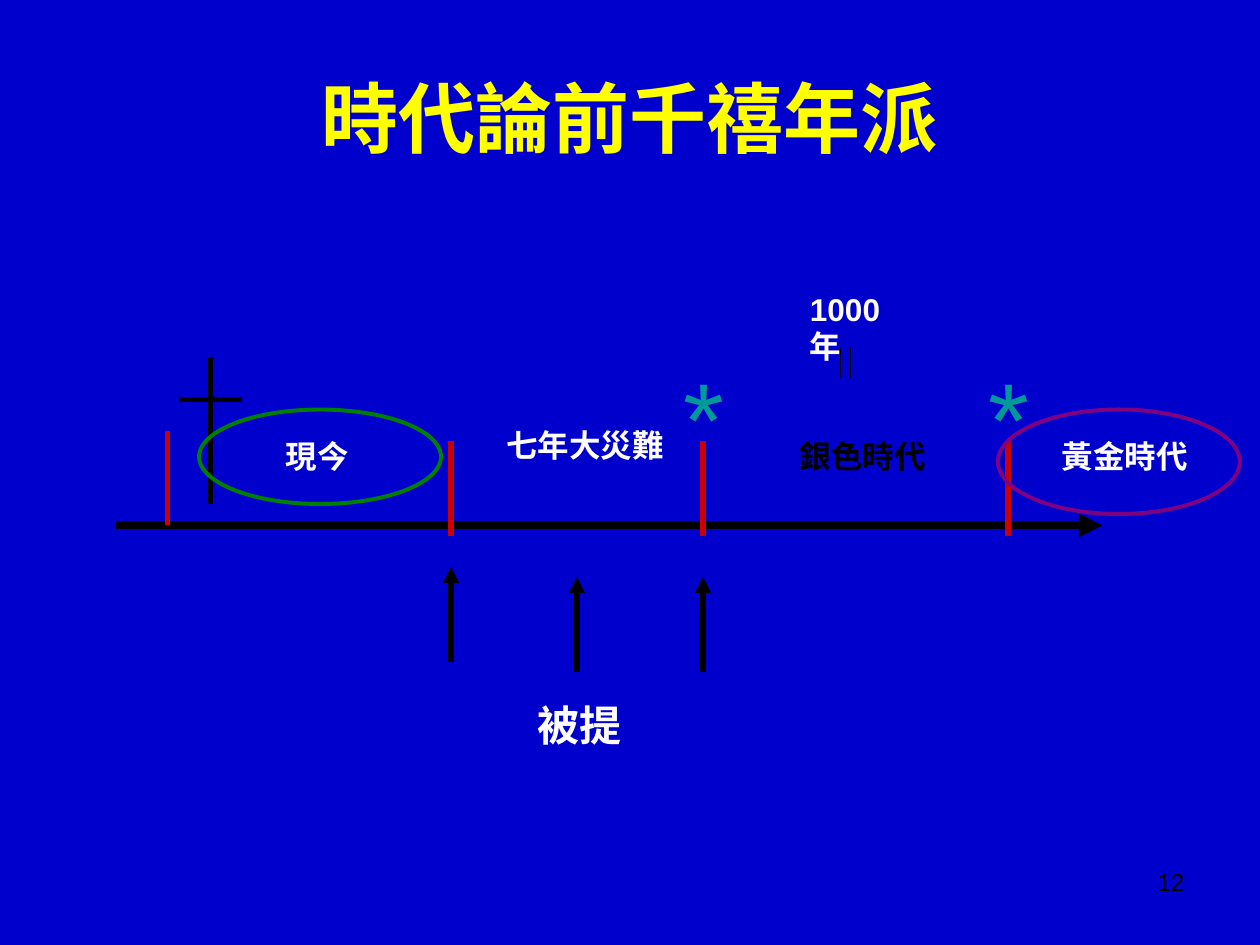
from lxml.etree import SubElement
from pptx import Presentation
from pptx.dml.color import RGBColor
from pptx.enum.shapes import MSO_CONNECTOR, MSO_SHAPE
from pptx.enum.text import MSO_ANCHOR, MSO_AUTO_SIZE, PP_ALIGN
from pptx.oxml.ns import qn
from pptx.util import Inches, Pt

COLORS = {
    "background": "0000CC",
    "title": "FFFF00",
    "white": "FFFFFF",
    "black": "000000",
    "red": "CC0000",
    "teal": "009999",
    "green": "008000",
    "purple": "800080",
}


def color(name):
    return RGBColor.from_string(COLORS[name])


def write_text(frame, text, size=18, fill="white", bold=True, align=PP_ALIGN.LEFT):
    paragraph = frame.paragraphs[0]
    paragraph.alignment = align
    run = paragraph.add_run()
    run.text = text
    run.font.name = "Arial"
    run.font.size = Pt(size)
    run.font.bold = bold
    run.font.color.rgb = color(fill)


def place(shape, left, top, width, height):
    shape.left, shape.top = Inches(left), Inches(top)
    shape.width, shape.height = Inches(width), Inches(height)


def add_title(slide, text):
    title = slide.shapes.title
    place(title, 0.5, 0.3, 9, 1.25)
    title.text_frame.vertical_anchor = MSO_ANCHOR.MIDDLE
    write_text(title.text_frame, text, size=44, fill="title", align=PP_ALIGN.CENTER)


def add_label(slide, text, box, wrap=False, grow=True, **text_format):
    label = slide.shapes.add_textbox(*map(Inches, box))
    frame = label.text_frame
    frame.word_wrap = wrap
    frame.auto_size = MSO_AUTO_SIZE.SHAPE_TO_FIT_TEXT if grow else MSO_AUTO_SIZE.NONE
    write_text(frame, text, **text_format)


def add_line(slide, start, end, fill="black", width=3, arrow=False):
    connector = slide.shapes.add_connector(
        MSO_CONNECTOR.STRAIGHT, *map(Inches, (*start, *end))
    )
    connector.line.color.rgb = color(fill)
    connector.line.width = Pt(width)
    if arrow:
        SubElement(connector.line._get_or_add_ln(), qn("a:tailEnd"), type="triangle")
    SubElement(connector._element.spPr, qn("a:effectLst"))


def add_ellipse(slide, box, outline):
    ellipse = slide.shapes.add_shape(MSO_SHAPE.OVAL, *map(Inches, box))
    ellipse.shadow.inherit = False
    ellipse.fill.background()
    ellipse.line.color.rgb = color(outline)
    ellipse.line.width = Pt(2.25)


def add_timeline(slide):
    add_line(slide, (0.92, 4.17), (8.75, 4.17), width=4.5, arrow=True)
    for x, top in ((1.33, 3.42), (3.58, 3.5), (5.58, 3.5), (8, 3.5)):
        add_line(slide, (x, top), (x, top + 0.75), fill="red")


def add_cross(slide):
    add_line(slide, (1.67, 2.83), (1.67, 4))
    add_line(slide, (1.42, 3.17), (1.92, 3.17))


def add_eras(slide):
    add_label(slide, "現今", (2.17, 3.42, 0.7, 0.4))
    add_label(slide, "銀色時代", (6.25, 3.42, 1.2, 0.4), fill="black")
    add_label(slide, "黃金時代", (8.33, 3.42, 1.2, 0.4))
    add_label(slide, "七年大災難", (3.92, 3.33, 1.45, 0.4))
    for left, width, wrap in ((5.33, 0.53, False), (7.75, 0.33, True)):
        add_label(slide, "*", (left, 2.75, width, 1.1), wrap=wrap,
                  size=60, fill="teal", bold=False)
    add_ellipse(slide, (1.58, 3.25, 1.92, 0.75), "green")
    add_ellipse(slide, (7.92, 3.25, 1.92, 0.83), "purple")


def add_rapture(slide):
    for x, tip in ((3.58, 4.5), (4.58, 4.58), (5.58, 4.58)):
        add_line(slide, (x, tip + 0.75), (x, tip), arrow=True)
    add_label(slide, "被提", (4.17, 5.5, 0.87, 0.5), size=24)


def add_millennium(slide):
    add_label(slide, "1000年", (6.33, 2.25, 0.95, 0.7), wrap=True)
    for x in (6.67, 6.75):
        add_line(slide, (x, 3), (x, 2.75), width=0.75)


def main():
    presentation = Presentation()
    presentation.slide_width = Inches(10)
    presentation.slide_height = Inches(7.5)
    slide = presentation.slides.add_slide(presentation.slide_layouts[5])
    slide.background.fill.solid()
    slide.background.fill.fore_color.rgb = color("background")
    add_title(slide, "時代論前千禧年派")
    add_timeline(slide)
    add_cross(slide)
    add_eras(slide)
    add_rapture(slide)
    add_millennium(slide)
    add_label(slide, "12", (7.17, 6.83, 2.33, 0.52), wrap=True, grow=False,
              size=14, fill="black", bold=False, align=PP_ALIGN.RIGHT)
    presentation.save("out.pptx")


if __name__ == "__main__":
    main()
